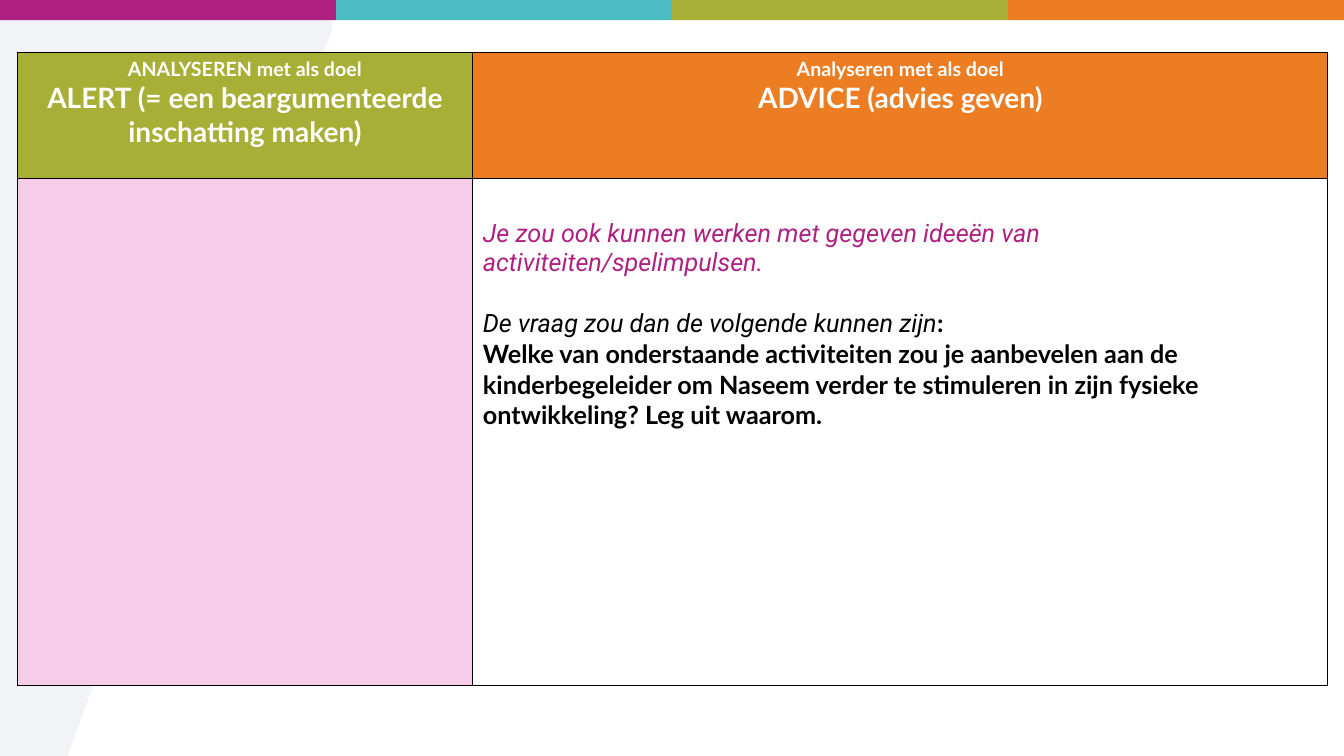
from lxml import etree
from pptx import Presentation
from pptx.dml.color import RGBColor
from pptx.enum.shapes import MSO_SHAPE
from pptx.enum.text import PP_ALIGN
from pptx.oxml.ns import qn
from pptx.util import Inches, Pt

MAGENTA = RGBColor(0xAE, 0x20, 0x81)
TEAL = RGBColor(0x4C, 0xBC, 0xC5)
OLIVE = RGBColor(0xA8, 0xAF, 0x37)
ORANGE = RGBColor(0xEC, 0x7D, 0x23)
PINK = RGBColor(0xF6, 0xCC, 0xE8)
MIST = RGBColor(0xE8, 0xEC, 0xF0)
WHITE = RGBColor(0xFF, 0xFF, 0xFF)
BLACK = RGBColor(0, 0, 0)


def paint(shape, color):
    shape.shadow.inherit = False
    shape.fill.solid()
    shape.fill.fore_color.rgb = color
    shape.line.fill.background()


def style(font, name, size, color, bold=False, italic=False):
    font.name = name
    font.size = Pt(size)
    font.color.rgb = color
    font.bold = bold
    font.italic = italic


prs = Presentation()
prs.slide_width, prs.slide_height = Inches(13.33), Inches(7.5)
slide = prs.slides.add_slide(prs.slide_layouts[6])

# Slanted pale panel on the left
outline = [(3.3, 0.22), (3.27, 0.13), (3.21, 0.07), (3.09, 0.05),
           (0, 0.05), (0, 7.5), (0.67, 7.5)]
builder = slide.shapes.build_freeform(Inches(3.28), Inches(0.33), scale=1.0)
builder.add_line_segments([(Inches(x), Inches(y)) for x, y in outline], close=True)
panel = builder.convert_to_shape()
paint(panel, MIST)
panel_color = panel.fill._xPr.find(qn("a:solidFill"))[0]
etree.SubElement(panel_color, qn("a:alpha")).set("val", "59000")

# Colour band along the top
band_width = 13.33 / 4
for i, color in enumerate([MAGENTA, TEAL, OLIVE, ORANGE]):
    band = slide.shapes.add_shape(MSO_SHAPE.RECTANGLE, Inches(i * band_width), 0,
                                  Inches(band_width), Inches(0.2))
    paint(band, color)

# Table with two goals of analysis
goals = slide.shapes.add_table(2, 2, Inches(0.17), Inches(0.52),
                               Inches(13), Inches(6.28)).table
goals.first_row = goals.horz_banding = False
for column, width in zip(goals.columns, [4.52, 8.48]):
    column.width = Inches(width)
for row, height in zip(goals.rows, [1.25, 5.03]):
    row.height = Inches(height)

# Cell borders and fills
for cell, color in zip(goals.iter_cells(), [OLIVE, ORANGE, PINK, WHITE]):
    cell_props = cell._tc.get_or_add_tcPr()
    for side in ("lnL", "lnR", "lnT", "lnB"):
        border = etree.SubElement(cell_props, qn(f"a:{side}"), w=str(Pt(1)))
        border_fill = etree.SubElement(border, qn("a:solidFill"))
        etree.SubElement(border_fill, qn("a:srgbClr"), val=str(BLACK))
    cell.fill.solid()
    cell.fill.fore_color.rgb = color

# Headings
headings = [("ANALYSEREN met als doel", "ALERT (= een beargumenteerde inschatting maken)"),
            ("Analyseren met als doel", "ADVICE (advies geven)")]
for col, heading in enumerate(headings):
    frame = goals.cell(0, col).text_frame
    frame.text = "\n".join(heading)
    for paragraph, size in zip(frame.paragraphs, [14, 20]):
        paragraph.alignment = PP_ALIGN.CENTER
        style(paragraph.font, "Lato", size, WHITE, bold=True)

# Advice text
advice = goals.cell(1, 1)
advice.margin_top = Inches(0.4)
idea, intro, question = [advice.text_frame.paragraphs[0],
                         advice.text_frame.add_paragraph(),
                         advice.text_frame.add_paragraph()]
idea.text = "Je zou ook kunnen werken met gegeven ideeën van activiteiten/spelimpulsen."
style(idea.font, "Roboto", 18, MAGENTA, italic=True)

intro.space_before = Pt(21.5)
for text, name, emphasis in [
        ("De vraag zou dan de volgende kunnen zijn", "Roboto", {"italic": True}),
        (":", "Lato", {"bold": True})]:
    run = intro.add_run()
    run.text = text
    style(run.font, name, 18, BLACK, **emphasis)

question.text = ("Welke van onderstaande activiteiten zou je aanbevelen aan de "
                 "kinderbegeleider om Naseem verder te stimuleren in zijn fysieke "
                 "ontwikkeling? Leg uit waarom.")
style(question.font, "Lato", 18, BLACK, bold=True)

prs.save("out.pptx")
